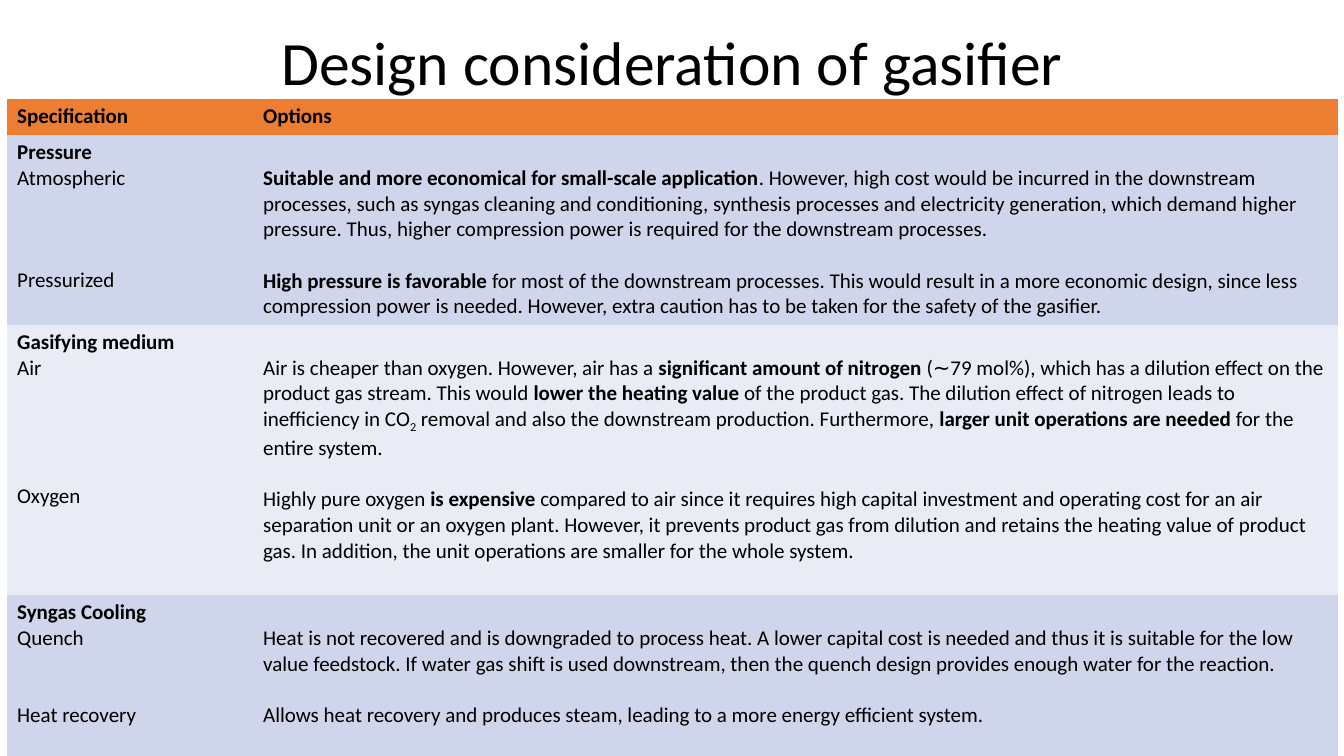
from dataclasses import dataclass

import pptx
import pptx.dml.color
import pptx.enum.text
import pptx.util

COLORS = {"text": "000000", "header": "ED7D31", "band": "CFD5EA", "light": "E9EBF5"}
FONT = "Calibri"
BODY_SIZE = 15
LINE = 18.3  # height of one body line, in points
NO_GRID_STYLE = "{2D5ABB26-0587-4C30-8999-92F81FD0307C}"
WIDTH, HEIGHT = pptx.util.Inches(13.33), pptx.util.Inches(7.5)


@dataclass(frozen=True)
class Span:
    text: str
    bold: bool = False
    subscript: bool = False


@dataclass(frozen=True)
class Entry:
    spans: list[Span]
    gap: int = 0  # empty lines above


@dataclass(frozen=True)
class Row:
    share: float  # percent of the slide height
    fill: str
    specification: list[Entry]
    options: list[Entry]
    options_drop: int = 1  # lines the options start below the heading


def plain(text: str, gap: int = 0) -> Entry:
    return Entry([Span(text)], gap)


def heading(text: str) -> Entry:
    return Entry([Span(text, bold=True)])


def across(percent: float) -> int:
    return round(WIDTH * percent / 100)


def down(percent: float) -> int:
    return round(HEIGHT * percent / 100)


def style_font(font: pptx.text.text.Font, size: float) -> None:
    font.name, font.size = FONT, pptx.util.Pt(size)
    font.color.rgb = pptx.dml.color.RGBColor.from_string(COLORS["text"])


def fill_cell(cell: pptx.table._Cell, entries: list[Entry], fill: str, drop: int = 0) -> None:
    cell.fill.solid()
    cell.fill.fore_color.rgb = pptx.dml.color.RGBColor.from_string(COLORS[fill])
    cell.margin_top = pptx.util.Inches(0.05) + pptx.util.Pt(LINE * drop)
    for index, entry in enumerate(entries):
        frame = cell.text_frame
        paragraph = frame.add_paragraph() if index else frame.paragraphs[0]
        paragraph.space_before = pptx.util.Pt(LINE * entry.gap)
        style_font(paragraph.font, BODY_SIZE)
        for span in entry.spans:
            run = paragraph.add_run()
            run.text, run.font.bold = span.text, span.bold
            if span.subscript:
                run._r.get_or_add_rPr().set("baseline", "-25000")


# Content
COLUMNS = [18.3, 80.72]  # percent of the slide width
ROWS = [
    Row(4.73, "header", [heading("Specification")], [heading("Options")], options_drop=0),
    Row(25.13, "band",
        [heading("Pressure"), plain("Atmospheric"), plain("Pressurized", gap=3)],
        [Entry([
            Span("Suitable and more economical for small-scale application", bold=True),
            Span(". However, high cost would be incurred in the downstream processes, such as "
                 "syngas cleaning and conditioning, synthesis processes and electricity "
                 "generation, which demand higher pressure. Thus, higher compression power is "
                 "required for the downstream processes.")]),
         Entry([
             Span("High pressure is favorable ", bold=True),
             Span("for most of the downstream processes. This would result in a more economic "
                  "design, since less compression power is needed. However, extra caution has "
                  "to be taken for the safety of the gasifier.")], gap=1)]),
    Row(35.73, "light",
        [heading("Gasifying medium"), plain("Air"), plain("Oxygen", gap=4)],
        [Entry([
            Span("Air is cheaper than oxygen. However, air has a "),
            Span("significant amount of nitrogen ", bold=True),
            Span("(∼79 mol%), which has a dilution effect on the product gas stream. "
                 "This would "),
            Span("lower the heating value ", bold=True),
            Span("of the product gas. The dilution effect of nitrogen leads to inefficiency "
                 "in CO"),
            Span("2", subscript=True),
            Span(" removal and also the downstream production. Furthermore, "),
            Span("larger unit operations are needed ", bold=True),
            Span("for the entire system.")]),
         Entry([
             Span("Highly pure oxygen "),
             Span("is expensive ", bold=True),
             Span("compared to air since it requires high capital investment and operating "
                  "cost for an air separation unit or an oxygen plant. However, it prevents "
                  "product gas from dilution and retains the heating value of product gas. In "
                  "addition, the unit operations are smaller for the whole system.")], gap=1)]),
    Row(21.33, "band",
        [heading("Syngas Cooling"), plain("Quench"), plain("Heat recovery", gap=2)],
        [plain("Heat is not recovered and is downgraded to process heat. A lower capital cost "
               "is needed and thus it is suitable for the low value feedstock. If water gas "
               "shift is used downstream, then the quench design provides enough water for "
               "the reaction."),
         plain("Allows heat recovery and produces steam, leading to a more energy efficient "
               "system.", gap=1)]),
]


def add_title(slide: pptx.slide.Slide) -> None:
    title = slide.shapes.title
    title.left, title.top = across(6.9), down(-0.93)
    title.width, title.height = across(86.26), down(19.33)
    title.text_frame.text = "Design consideration of gasifier"
    title.text_frame.vertical_anchor = pptx.enum.text.MSO_ANCHOR.MIDDLE
    line = title.text_frame.paragraphs[0]
    line.alignment = pptx.enum.text.PP_ALIGN.CENTER
    line.line_spacing = 0.9
    style_font(line.font, 44)


def add_considerations(slide: pptx.slide.Slide) -> None:
    considerations = slide.shapes.add_table(
        len(ROWS), len(COLUMNS), across(0.53), down(13.07),
        across(sum(COLUMNS)), down(sum(row.share for row in ROWS))).table
    considerations.first_row = considerations.horz_banding = False
    # A style without borders
    considerations._tbl.tblPr[0].text = NO_GRID_STYLE
    for column, share in zip(considerations.columns, COLUMNS):
        column.width = across(share)
    for index, row in enumerate(ROWS):
        considerations.rows[index].height = down(row.share)
        fill_cell(considerations.cell(index, 0), row.specification, row.fill)
        fill_cell(considerations.cell(index, 1), row.options, row.fill, row.options_drop)


def main() -> None:
    deck = pptx.Presentation()
    deck.slide_width, deck.slide_height = WIDTH, HEIGHT
    slide = deck.slides.add_slide(deck.slide_layouts[5])  # title only
    add_title(slide)
    add_considerations(slide)
    deck.save("out.pptx")


if __name__ == "__main__":
    main()
